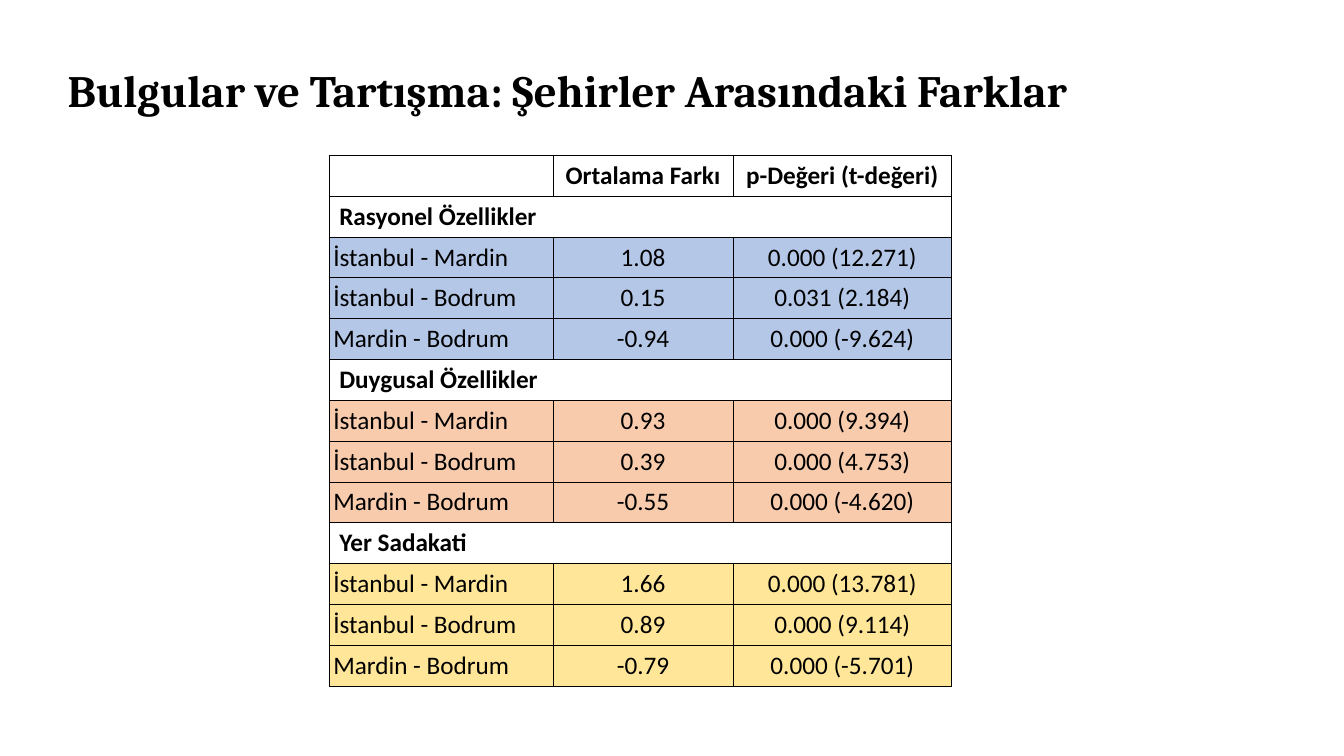
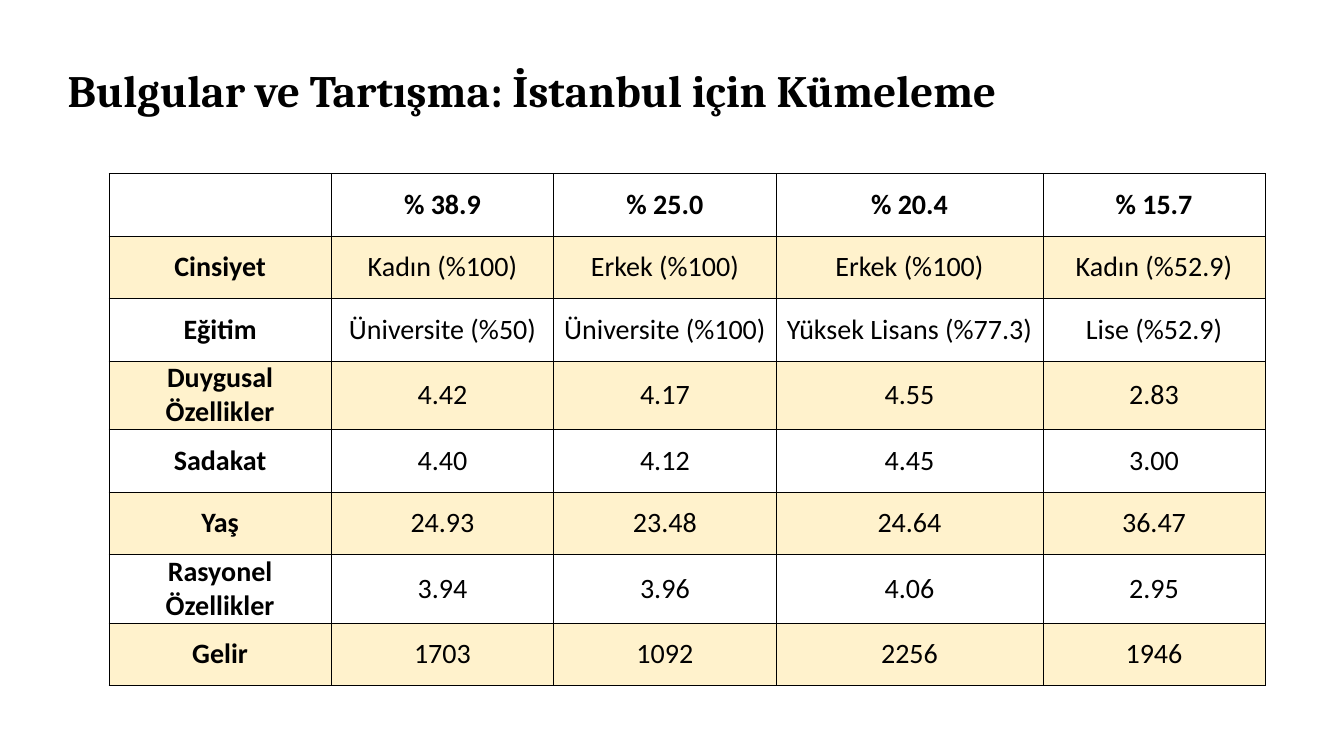
"""Build two slides of findings, each a title over a bordered table."""
from dataclasses import dataclass

from lxml.etree import SubElement
from pptx import Presentation
from pptx.dml.color import RGBColor as Rgb
from pptx.enum.text import MSO_ANCHOR as Anchor, MSO_AUTO_SIZE as AutoSize, PP_ALIGN as Align
from pptx.oxml.ns import qn
from pptx.util import Inches, Pt

SLIDE_W, SLIDE_H = Inches(13.33), Inches(7.5)
TITLE_ONLY = 5


@dataclass(frozen=True)
class Theme:
    """Colours, fonts, sizes and cell insets that the slides share."""
    ink: str = "000000"
    paper: str = "FFFFFF"
    blue: str = "B4C7E7"
    orange: str = "F8CBAD"
    yellow: str = "FFE699"
    cream: str = "FFF2CC"
    title_font: str = "Cambria"
    body_font: str = "Calibri"
    title_size: int = 32
    difference_size: int = 18
    cluster_size: int = 20
    border: float = 0.5
    wide_inset: tuple = (0.75, 0.67)
    indent_inset: tuple = (0.3, 0)
    snug_inset: tuple = (0.5, 0)


THEME = Theme()

PAIRS = ("İstanbul - Mardin", "İstanbul - Bodrum", "Mardin - Bodrum")
DIFFERENCE_HEAD = ("", "Ortalama Farkı", "p-Değeri (t-değeri)")
DIFFERENCES = (
    ("Rasyonel Özellikler", THEME.blue,
     (("1.08", "0.000 (12.271)"), ("0.15", "0.031 (2.184)"), ("-0.94", "0.000 (-9.624)"))),
    ("Duygusal Özellikler", THEME.orange,
     (("0.93", "0.000 (9.394)"), ("0.39", "0.000 (4.753)"), ("-0.55", "0.000 (-4.620)"))),
    ("Yer Sadakati", THEME.yellow,
     (("1.66", "0.000 (13.781)"), ("0.89", "0.000 (9.114)"), ("-0.79", "0.000 (-5.701)"))),
)
CLUSTERS = (
    ("", "% 38.9", "% 25.0", "% 20.4", "% 15.7"),
    ("Cinsiyet", "Kadın (%100)", "Erkek (%100)", "Erkek (%100)", "Kadın (%52.9)"),
    ("Eğitim", "Üniversite (%50)", "Üniversite (%100)", "Yüksek Lisans (%77.3)", "Lise (%52.9)"),
    ("Duygusal Özellikler", "4.42", "4.17", "4.55", "2.83"),
    ("Sadakat", "4.40", "4.12", "4.45", "3.00"),
    ("Yaş", "24.93", "23.48", "24.64", "36.47"),
    ("Rasyonel Özellikler", "3.94", "3.96", "4.06", "2.95"),
    ("Gelir", "1703", "1092", "2256", "1946"),
)


def across(percent):
    """Return a share of the slide's width."""
    return int(SLIDE_W * percent / 100)


def down(percent):
    """Return a share of the slide's height."""
    return int(SLIDE_H * percent / 100)


def apply(target, formats):
    """Set each attribute named in formats on the target."""
    for name, value in formats.items():
        setattr(target, name, value)


def write(p, text, font, size, bold, align):
    """Write one formatted run into a paragraph."""
    p.alignment = align
    r = p.add_run()
    r.text = text
    apply(r.font, {"name": font, "size": Pt(size), "bold": bold})
    r.font.color.rgb = Rgb.from_string(THEME.ink)


def add_titled_slide(prs, text):
    """Add a title-only slide with its placeholder in the shared style."""
    slide = prs.slides.add_slide(prs.slide_layouts[TITLE_ONLY])
    sp = slide.shapes.title
    apply(sp, {"left": across(4.28), "top": down(4), "width": across(88.6), "height": down(15.6)})
    tf = sp.text_frame
    apply(tf, {"word_wrap": True, "auto_size": AutoSize.NONE, "vertical_anchor": Anchor.MIDDLE})
    write(tf.paragraphs[0], text, THEME.title_font, THEME.title_size, True, Align.LEFT)
    return slide


def add_borders(cell):
    """Rule all four sides of a cell."""
    props = cell._tc.get_or_add_tcPr()
    for side in ("a:lnL", "a:lnR", "a:lnT", "a:lnB"):
        line = SubElement(props, qn(side), w=str(Pt(THEME.border)))
        SubElement(SubElement(line, qn("a:solidFill")), qn("a:srgbClr"), val=THEME.ink)


def add_grid(slide, left, top, widths, row_height, rows):
    """Add a plain bordered table with equal rows, placed by shares of the slide."""
    table = slide.shapes.add_table(rows, len(widths), across(left), down(top),
                                   across(sum(widths)), down(row_height * rows)).table
    apply(table, {"first_row": False, "horz_banding": False})
    for column, width in zip(table.columns, widths):
        column.width = across(width)
    for row in table.rows:
        row.height = down(row_height)
    for cell in table.iter_cells():
        add_borders(cell)
        fill_cell(cell, THEME.paper)
    return table


def fill_cell(cell, color):
    """Give a cell a solid fill."""
    cell.fill.solid()
    cell.fill.fore_color.rgb = Rgb.from_string(color)


def put_text(cell, text, size, inset, bold=False, align=Align.CENTER):
    """Write a cell's text, centred on its height."""
    side, edge = across(inset[0]), down(inset[1])
    apply(cell, {"margin_left": side, "margin_right": side, "margin_top": edge,
                 "margin_bottom": edge, "vertical_anchor": Anchor.MIDDLE})
    if text:
        write(cell.text_frame.paragraphs[0], text, THEME.body_font, size, bold, align)


def add_difference_table(slide):
    """Add the city pairs, grouped under one spanning row per scale."""
    size, last = THEME.difference_size, len(DIFFERENCE_HEAD) - 1
    group_rows = len(PAIRS) + 1
    table = add_grid(slide, 24.5, 20.53, (16.65, 13.4, 16.25), 5.4,
                     1 + group_rows * len(DIFFERENCES))
    for col, text in enumerate(DIFFERENCE_HEAD):
        put_text(table.cell(0, col), text, size, THEME.wide_inset, bold=True)
    for group, (scale, color, values) in enumerate(DIFFERENCES):
        start = 1 + group * group_rows
        table.cell(start, 0).merge(table.cell(start, last))
        put_text(table.cell(start, 0), scale, size, THEME.wide_inset, True, Align.LEFT)
        for row, (pair, numbers) in enumerate(zip(PAIRS, values), start + 1):
            for col, text in enumerate((pair, *numbers)):
                cell = table.cell(row, col)
                fill_cell(cell, color)
                put_text(cell, text, size, THEME.indent_inset,
                         align=Align.CENTER if col else Align.LEFT)


def add_cluster_table(slide):
    """Add the cluster profile with every second row tinted."""
    table = add_grid(slide, 8.1, 22.93, (16.55, 16.55, 16.55, 19.85, 16.55), 8.27, len(CLUSTERS))
    for row, texts in enumerate(CLUSTERS):
        for col, text in enumerate(texts):
            cell = table.cell(row, col)
            if row % 2:
                fill_cell(cell, THEME.cream)
            put_text(cell, text, THEME.cluster_size, THEME.snug_inset, bold=row == 0 or col == 0)


def main():
    """Build and save the presentation."""
    prs = Presentation()
    apply(prs, {"slide_width": SLIDE_W, "slide_height": SLIDE_H})
    add_difference_table(add_titled_slide(prs, "Bulgular ve Tartışma: Şehirler Arasındaki Farklar"))
    add_cluster_table(add_titled_slide(prs, "Bulgular ve Tartışma: İstanbul için Kümeleme"))
    prs.save("out.pptx")


if __name__ == "__main__":
    main()
